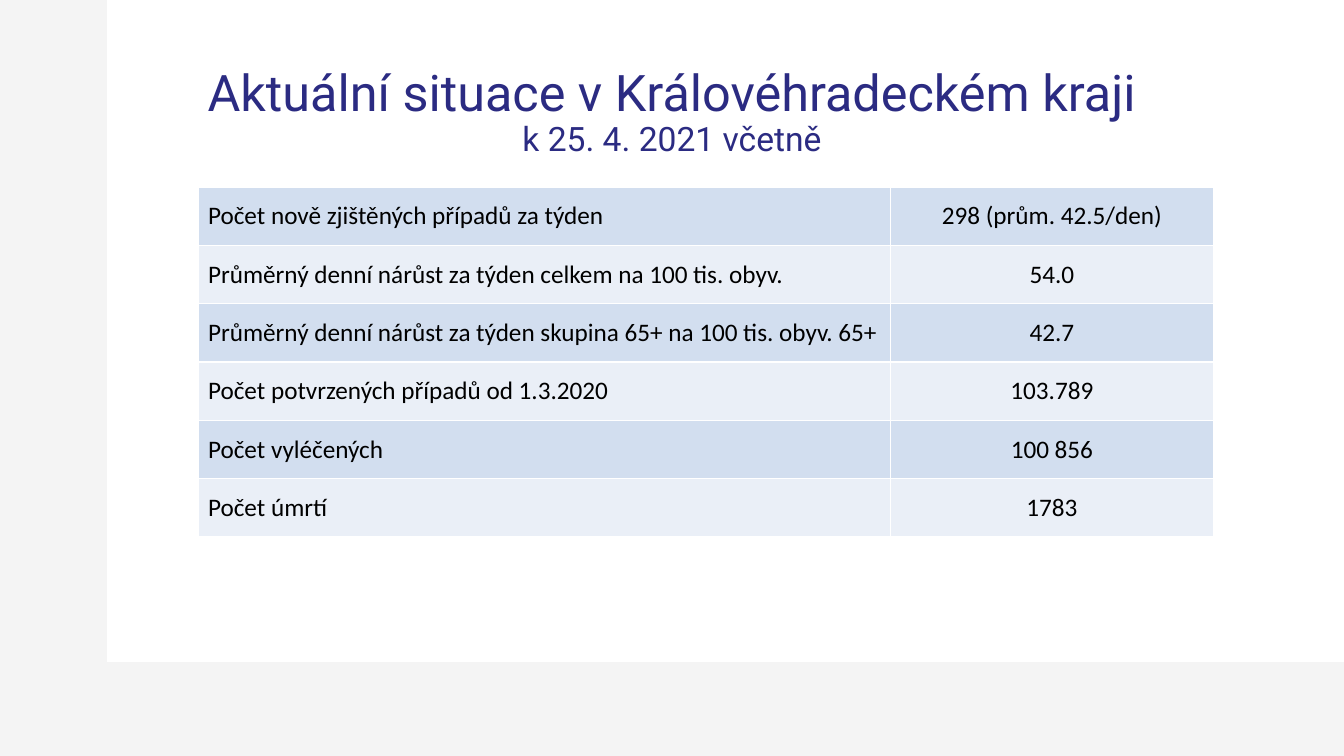
from lxml import etree
from pptx import Presentation
from pptx.dml.color import RGBColor
from pptx.enum.shapes import MSO_SHAPE
from pptx.enum.text import MSO_ANCHOR as Anchor, PP_ALIGN as Align
from pptx.oxml.ns import qn
from pptx.util import Cm, Pt

# Content
TITLE = [("Aktuální situace v Královéhradeckém kraji", 36), ("k 25. 4. 2021 včetně", 24)]
ROWS = [
    ("Počet nově zjištěných případů za týden", "298 (prům. 42.5/den)"),
    ("Průměrný denní nárůst za týden celkem na 100 tis. obyv. ", "54.0"),
    ("Průměrný denní nárůst za týden skupina 65+ na 100 tis. obyv. 65+", "42.7"),
    ("Počet potvrzených případů od 1.3.2020", "103.789"),
    ("Počet vyléčených", "100 856"),
    ("Počet úmrtí", "1783"),
]
COLUMN_WIDTHS = (Cm(17.45), Cm(8.14))
ROW_HEIGHT = Cm(1.47)
BANDS = ("D2DEEF", "EAEFF7")
WHITE, GREY, NAVY, BLACK = "FFFFFF", "F4F4F4", "2B2B82", "000000"


def color(value):
    return RGBColor.from_string(value)


def fill_solid(fill, value):
    fill.solid()
    fill.fore_color.rgb = color(value)


def add_text(paragraph, text, font="Calibri", size=18, ink=BLACK, align=Align.LEFT):
    paragraph.alignment = align
    run = paragraph.add_run()
    run.text = text
    run.font.name = font
    run.font.size = Pt(size)
    run.font.color.rgb = color(ink)


def add_borders(cell, value, width):
    properties = cell._tc.get_or_add_tcPr()
    for index, side in enumerate(("a:lnL", "a:lnR", "a:lnT", "a:lnB")):
        line = etree.Element(qn(side), w=str(Pt(width)))
        solid = etree.SubElement(line, qn("a:solidFill"))
        etree.SubElement(solid, qn("a:srgbClr"), val=value)
        properties.insert(index, line)


presentation = Presentation()
presentation.slide_width, presentation.slide_height = Cm(33.87), Cm(19.05)
slide = presentation.slides.add_slide(presentation.slide_layouts[6])

# Grey background with a white panel
fill_solid(slide.background.fill, GREY)
panel = slide.shapes.add_shape(MSO_SHAPE.RECTANGLE, Cm(2.7), 0, Cm(31.17), Cm(16.68))
panel.shadow.inherit = False
fill_solid(panel.fill, WHITE)
panel.line.fill.background()

# Title: two lines in one paragraph
title = slide.shapes.add_textbox(Cm(2.33), Cm(1.01), Cm(29.21), Cm(3.68)).text_frame
title.word_wrap = True
title.vertical_anchor = Anchor.MIDDLE
heading = title.paragraphs[0]
heading.line_spacing = 0.9
for number, (text, size) in enumerate(TITLE):
    if number:
        heading.add_line_break()
    add_text(heading, text, font="Roboto", size=size, ink=NAVY, align=Align.CENTER)

# Table with alternating bands
table = slide.shapes.add_table(
    len(ROWS), len(COLUMN_WIDTHS), Cm(4.99), Cm(4.71),
    sum(COLUMN_WIDTHS), ROW_HEIGHT * len(ROWS)).table
table.first_row = False
for column, width in zip(table.columns, COLUMN_WIDTHS):
    column.width = width
for row_index, values in enumerate(ROWS):
    table.rows[row_index].height = ROW_HEIGHT
    for column_index, text in enumerate(values):
        cell = table.cell(row_index, column_index)
        cell.vertical_anchor = Anchor.MIDDLE
        fill_solid(cell.fill, BANDS[row_index % 2])
        add_borders(cell, WHITE, 1)
        add_text(cell.text_frame.paragraphs[0], text,
                 align=Align.CENTER if column_index else Align.LEFT)

presentation.save("out.pptx")
